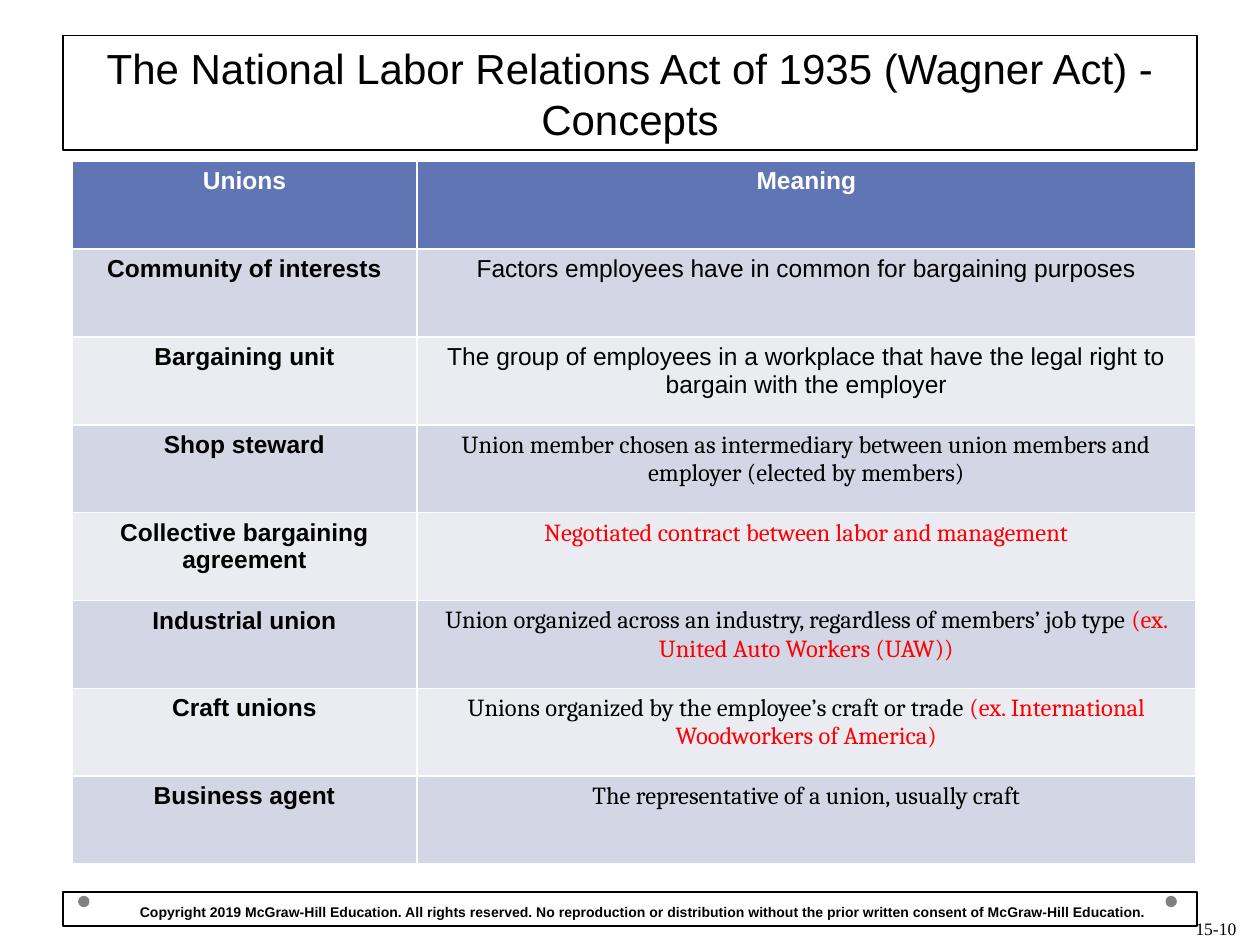
from dataclasses import dataclass

from pptx import Presentation
from pptx.dml.color import RGBColor
from pptx.enum.shapes import MSO_SHAPE
from pptx.enum.text import MSO_ANCHOR, MSO_AUTO_SIZE, PP_ALIGN
from pptx.util import Inches, Pt


@dataclass(frozen=True)
class Theme:
    """Colours, fonts and type sizes of the slide."""
    black: RGBColor = RGBColor(0, 0, 0)
    white: RGBColor = RGBColor(255, 255, 255)
    red: RGBColor = RGBColor(255, 0, 0)
    grey: RGBColor = RGBColor(0x80, 0x80, 0x80)
    header: RGBColor = RGBColor(0x60, 0x76, 0xB4)
    bands: tuple = (RGBColor(0xD2, 0xD6, 0xE5), RGBColor(0xEA, 0xEC, 0xF2))
    sans: str = "Arial"
    serif: str = "Cambria"
    number: str = "Times New Roman"
    title_size: Pt = Pt(24)
    table_size: Pt = Pt(14)
    number_size: Pt = Pt(10)
    footer_size: Pt = Pt(8)
    outline: Pt = Pt(0.75)


THEME = Theme()
TITLE = "The National Labor Relations Act of 1935 (Wagner Act) - Concepts"
COPYRIGHT = (
    "Copyright 2019 McGraw-Hill Education. All rights reserved. No reproduction or "
    "distribution without the prior written consent of McGraw-Hill Education."
)
HEADINGS = ("Unions", "Meaning")
CONCEPTS = [
    ("Community of interests", THEME.sans,
     "Factors employees have in common for bargaining purposes", ""),
    ("Bargaining unit", THEME.sans,
     "The group of employees in a workplace that have the legal right to "
     "bargain with the employer", ""),
    ("Shop steward", THEME.serif,
     "Union member chosen as intermediary between union members and employer "
     "(elected by members)", ""),
    ("Collective bargaining agreement", THEME.serif,
     "", "Negotiated contract between labor and management"),
    ("Industrial union", THEME.serif,
     "Union organized across an industry, regardless of members’ job type ",
     "(ex. United Auto Workers (UAW))"),
    ("Craft unions", THEME.serif,
     "Unions organized by the employee’s craft or trade ",
     "(ex. International Woodworkers of America)"),
    ("Business agent", THEME.serif,
     "The representative of a union, usually craft", ""),
]


def apply(target, formats):
    """Set each attribute of the target from the format values."""
    for attribute, value in formats.items():
        setattr(target, attribute, value)


def add_text(paragraph, text, color, align=PP_ALIGN.CENTER, **font_formats):
    """Append a formatted run to an aligned paragraph."""
    paragraph.alignment = align
    run = paragraph.add_run()
    run.text = text
    apply(run.font, font_formats)
    run.font.color.rgb = color


def outline_box(shape):
    """Give a box a thin black outline and no fill."""
    shape.fill.background()
    shape.line.color.rgb = THEME.black
    shape.line.width = THEME.outline


def add_title(slide, left, top, width, height):
    """Place the outlined title."""
    title = slide.shapes.title
    apply(title, dict(left=left, top=top, width=width, height=height))
    outline_box(title)
    apply(title.text_frame, dict(
        vertical_anchor=MSO_ANCHOR.BOTTOM, auto_size=MSO_AUTO_SIZE.NONE, word_wrap=True))
    add_text(title.text_frame.paragraphs[0], TITLE, THEME.black,
             name=THEME.sans, size=THEME.title_size)


def add_concepts(slide, left, top, width, height):
    """Place the table of concepts and their meanings."""
    row_count = len(CONCEPTS) + 1
    table = slide.shapes.add_table(row_count, 2, left, top, width, height).table
    table.columns[0].width = Inches(2.74)
    table.columns[1].width = width - Inches(2.74)

    def fill_cell(row, column, color, *parts):
        """Fill one cell with its colour and formatted text parts."""
        cell = table.cell(row, column)
        cell.fill.solid()
        cell.fill.fore_color.rgb = color
        for text, ink, font, bold in parts:
            if text:
                add_text(cell.text_frame.paragraphs[0], text, ink,
                         name=font, size=THEME.table_size, bold=bold)

    for column, heading in enumerate(HEADINGS):
        fill_cell(0, column, THEME.header, (heading, THEME.white, THEME.sans, True))
    for row, (concept, font, meaning, highlight) in enumerate(CONCEPTS, start=1):
        band = THEME.bands[(row - 1) % 2]
        fill_cell(row, 0, band, (concept, THEME.black, THEME.sans, True))
        fill_cell(row, 1, band, (meaning, THEME.black, font, False),
                  (highlight, THEME.red, font, False))


def add_footer(slide, left, top, width, height):
    """Place the two dots and the outlined copyright line."""
    dot_size = Inches(0.09)
    for offset in (Inches(0.12), width - Inches(0.25)):
        dot = slide.shapes.add_shape(
            MSO_SHAPE.OVAL, left + offset, top + Inches(0.03), dot_size, dot_size)
        dot.shadow.inherit = False
        dot.fill.solid()
        dot.fill.fore_color.rgb = THEME.grey
        dot.line.fill.background()
    notice = slide.shapes.add_textbox(left, top, width, height)
    outline_box(notice)
    apply(notice.text_frame, dict(
        word_wrap=True, margin_left=Inches(0.61), margin_top=Inches(0.09)))
    add_text(notice.text_frame.paragraphs[0], COPYRIGHT, THEME.black, PP_ALIGN.LEFT,
             name=THEME.sans, size=THEME.footer_size, bold=True)


def add_page_number(slide, left, top, width, height):
    """Place the page number in the bottom right corner."""
    page_number = slide.shapes.add_textbox(left, top, width, height)
    apply(page_number.text_frame, dict(word_wrap=True, vertical_anchor=MSO_ANCHOR.BOTTOM))
    add_text(page_number.text_frame.paragraphs[0], "15-10", THEME.black, PP_ALIGN.RIGHT,
             name=THEME.number, size=THEME.number_size)


def main():
    """Build and save the slide."""
    presentation = Presentation()
    apply(presentation, dict(slide_width=Inches(10), slide_height=Inches(7.5)))
    slide = presentation.slides.add_slide(presentation.slide_layouts[5])
    add_page_number(slide, Inches(7.58), Inches(7), Inches(2.33), Inches(0.5))
    add_title(slide, Inches(0.5), Inches(0.28), Inches(9), Inches(0.91))
    add_footer(slide, Inches(0.5), Inches(7.08), Inches(9), Inches(0.27))
    add_concepts(slide, Inches(0.57), Inches(1.28), Inches(8.92), Inches(5.58))
    presentation.save("out.pptx")


if __name__ == "__main__":
    main()
